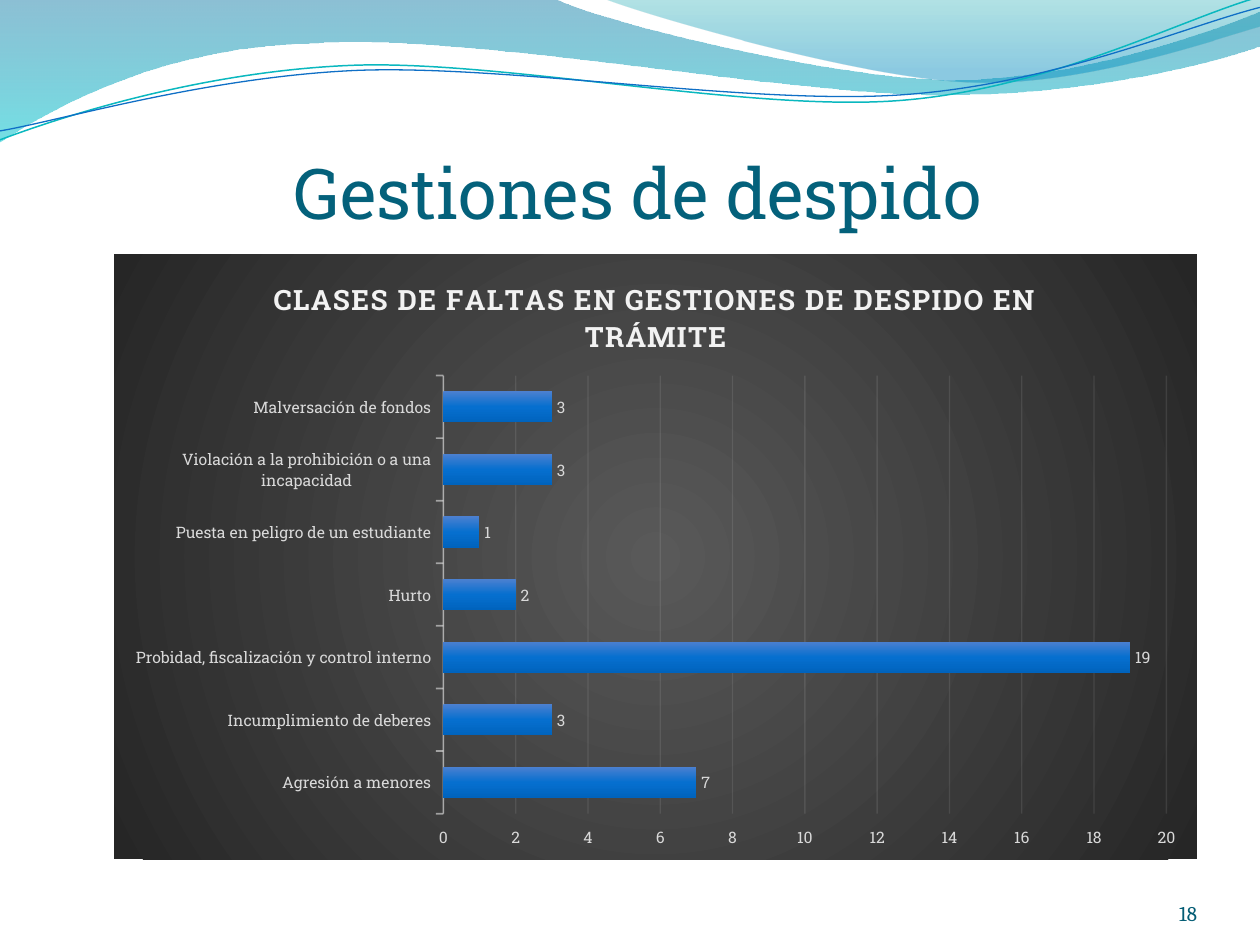
from lxml import etree
from pptx import Presentation
from pptx.chart.data import CategoryChartData
from pptx.dml.color import RGBColor
from pptx.enum.chart import XL_CHART_TYPE, XL_LABEL_POSITION, XL_TICK_MARK
from pptx.enum.text import MSO_ANCHOR, PP_ALIGN
from pptx.oxml.ns import qn
from pptx.util import Cm, Pt

BAR = XL_CHART_TYPE.BAR_CLUSTERED
OUTER = XL_LABEL_POSITION.OUTSIDE_END
TICK = XL_TICK_MARK.OUTSIDE
LOW = MSO_ANCHOR.BOTTOM
MID, RIGHT = PP_ALIGN.CENTER, PP_ALIGN.RIGHT
SLAB = "Roboto Slab"

HEAD = "CLASES DE FALTAS EN GESTIONES DE DESPIDO EN TRÁMITE"
FAULTS = {
    "Agresión a menores": 7,
    "Incumplimiento de deberes": 3,
    "Probidad, fiscalización y control interno": 19,
    "Hurto": 2,
    "Puesta en peligro de un estudiante": 1,
    "Violación a la prohibición o a una incapacidad": 3,
    "Malversación de fondos": 3,
}

BANDS = [
    ([(0, 0), (11.18, -0.03),
      (12.09, 0.43, 16.87, 1.6, 19.25, 1.6),
      (21.67, 1.6, 24.33, 0.66, 25.4, 0.23),
      (25.43, 0.91),
      (24.97, 1.12, 22.1, 1.93, 18.95, 1.91),
      (15.8, 1.91, 9.7, 0.71, 6.53, 0.86),
      (3.28, 0.91, 1.17, 2.11, -0.03, 2.87)],
     [(0, "0074A1", 45), (100, "00C6CF", 55)]),
    ([(12.17, -0.03),
      (12.93, 0.28, 17.32, 1.57, 19.53, 1.65),
      (21.74, 1.75, 24.41, 0.81, 25.4, 0.53),
      (25.4, 0)],
     [(0, "00A1A9", 30), (80, "008BBF", 45)]),
]
LINES = [
    ([(0, 2.82),
      (1.22, 2.36, 4.01, 1.45, 7.04, 1.32),
      (10.03, 1.19, 15.06, 2.26, 18.11, 2.03),
      (21.16, 1.8, 23.83, 0.38, 25.35, -0.05)], "0AB8BF", 0.85),
    ([(0, 2.64),
      (1.19, 2.44, 4.17, 1.55, 7.19, 1.42),
      (10.24, 1.3, 15.16, 2.13, 18.21, 1.91),
      (21.23, 1.7, 23.9, 0.53, 25.4, 0.15)], "0F6FC6", 0.75),
]


def color(code):
    return RGBColor.from_string(code)


def fade(node, alpha):
    etree.SubElement(node, qn("a:alpha")).set("val", str(alpha * 1000))


def blend(stops, round_=False):
    grad = etree.Element(qn("a:gradFill"), rotWithShape="1")
    group = etree.SubElement(grad, qn("a:gsLst"))
    for pos, code, alpha in stops:
        stop = etree.SubElement(group, qn("a:gs"), pos=str(pos * 1000))
        tint = etree.SubElement(stop, qn("a:srgbClr"), val=code)
        if alpha < 100:
            fade(tint, alpha)
    if round_:
        ring = etree.SubElement(grad, qn("a:path"), path="circle")
        sides = dict.fromkeys("ltrb", "50000")
        etree.SubElement(ring, qn("a:fillToRect"), **sides)
    else:
        etree.SubElement(grad, qn("a:lin"), ang="5400000", scaled="0")
    return grad


def shade(part, fill, stops):
    fill.background()
    spot = part.find(".//" + qn("a:noFill"))
    spot.getparent().replace(spot, blend(stops))


def style(font, size, code, face=SLAB, bold=False):
    font.size, font.name, font.bold = Pt(size), face, bold
    font.color.rgb = color(code)


def write(frame, words, size=12, code="000000", face=SLAB, bold=False,
          align=MID, space=0):
    para = frame.paragraphs[0]
    para.alignment = align
    run = para.add_run()
    run.text = words
    style(run.font, size, code, face, bold)
    if space:
        run.font._element.set("spc", str(space))


def place(shape, box):
    shape.left, shape.top, shape.width, shape.height = map(Cm, box)


def seat(frame, top=0):
    frame.word_wrap = True
    frame.vertical_anchor = LOW
    frame.margin_left = frame.margin_right = frame.margin_bottom = 0
    frame.margin_top = Cm(top)


def bend(shape, steps):
    legs = iter(shape._element.findall(".//" + qn("a:lnTo")))
    for step in steps[1:]:
        first = next(legs)
        if len(step) == 2:
            continue
        arc = etree.Element(qn("a:cubicBezTo"))
        first.addprevious(arc)
        for leg in (first, next(legs), next(legs)):
            arc.append(leg[0])
            leg.getparent().remove(leg)


def curve(slide, box, steps, close):
    left, top = box[:2]
    dots = [(Cm(left + step[i]), Cm(top + step[i + 1]))
            for step in steps for i in range(0, len(step), 2)]
    pen = slide.shapes.build_freeform(*dots[0])
    pen.add_line_segments(dots[1:], close=close)
    shape = pen.convert_to_shape()
    bend(shape, steps)
    shape.shadow.inherit = False
    return shape


def add_waves(slide, box):
    for steps, stops in BANDS:
        band = curve(slide, box, steps, True)
        shade(band._element, band.fill, stops)
        band.line.fill.background()
    for steps, code, width in LINES:
        line = curve(slide, box, steps, False)
        line.fill.background()
        line.line.color.rgb = color(code)
        line.line.width = Pt(width)


def add_title(slide, box):
    title = slide.shapes.title
    place(title, box)
    seat(title.text_frame, 0.13)
    write(title.text_frame, " Gestiones de despido", size=40, code="04617B")


def add_number(slide, box):
    frame = slide.shapes.add_textbox(*map(Cm, box)).text_frame
    seat(frame)
    write(frame, "18", code="045D75", face="Cambria", align=RIGHT)


def rule(form, width, alpha):
    form.line.color.rgb = color("F2F2F2")
    form.line.width = Pt(width)
    fade(form.line._ln.find(".//" + qn("a:srgbClr")), alpha)


def add_chart(slide, box):
    data = CategoryChartData()
    data.categories = list(FAULTS)
    data.add_series(HEAD, list(FAULTS.values()))
    chart = slide.shapes.add_chart(BAR, *map(Cm, box), data).chart
    chart.has_legend = False
    style(chart.font, 10, "000000")
    chart.has_title = True
    write(chart.chart_title.text_frame, HEAD, size=16, code="F2F2F2",
          bold=True, space=100)
    chart.chart_title.include_in_layout = False

    back = etree.Element(qn("c:spPr"))
    back.append(blend([(0, "595959", 100), (100, "262626", 100)], True))
    edge = etree.SubElement(back, qn("a:ln"))
    etree.SubElement(edge, qn("a:noFill"))
    chart._chartSpace.find(qn("c:chart")).addnext(back)

    names, scale = chart.category_axis, chart.value_axis
    for axis in (names, scale):
        style(axis.tick_labels.font, 9, "D9D9D9")
        axis.major_tick_mark = TICK
    rule(names.format, 1, 54)
    scale.minimum_scale, scale.maximum_scale, scale.major_unit = 0, 20, 2
    scale.format.line.fill.background()
    scale.has_major_gridlines = True
    rule(scale.major_gridlines.format, 0.75, 10)

    plot = chart.plots[0]
    plot.gap_width = 100
    plot.vary_by_categories = False
    bars = plot.series[0]
    shade(bars._element, bars.format.fill,
          [(0, "4C80D0", 100), (50, "066FCF", 100), (100, "0063BD", 100)])
    tags = bars.data_labels
    tags.show_value = True
    tags.position = OUTER
    style(tags.font, 9, "D9D9D9")


def main():
    deck = Presentation()
    deck.slide_width, deck.slide_height = Cm(25.4), Cm(19.05)
    slide = deck.slides.add_slide(deck.slide_layouts[5])
    add_waves(slide, (0, 0, 25.4, 2.87))
    add_title(slide, (1.15, 1.52, 23.06, 3.18))
    add_number(slide, (22.02, 17.65, 2.11, 1.02))
    add_chart(slide, (2.3, 5.13, 21.83, 12.19))
    deck.save("out.pptx")


if __name__ == "__main__":
    main()
